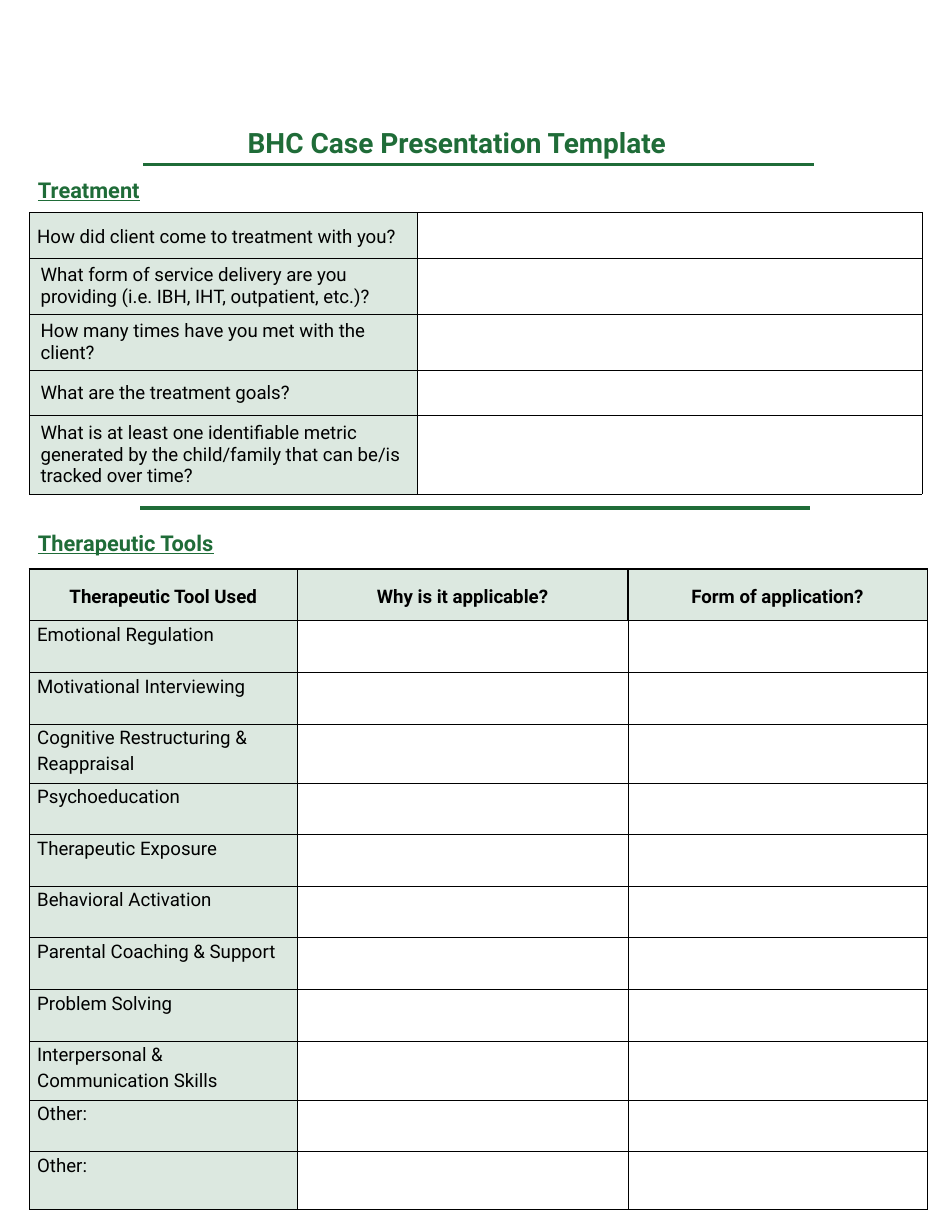
from lxml import etree
from pptx import Presentation
from pptx.dml.color import RGBColor
from pptx.enum import shapes, text
from pptx.oxml import ns
from pptx.util import Pt

GREEN = RGBColor(0x1F, 0x6C, 0x38)
PALE = RGBColor(0xDC, 0xE8, 0xE0)
BLACK = RGBColor(0, 0, 0)
WHITE = RGBColor(255, 255, 255)

QUESTIONS = [
    "How did client come to treatment with you?",
    "What form of service delivery are you providing (i.e. IBH, IHT, outpatient, etc.)?",
    "How many times have you met with the client?",
    "What are the treatment goals?",
    "What is at least one identifiable metric generated by the child/family that can be/is tracked over time?",
]
TOOL_HEADINGS = ["Therapeutic Tool Used", "Why is it applicable?", "Form of application?"]
TOOLS = [
    "Emotional Regulation", "Motivational Interviewing",
    "Cognitive Restructuring & Reappraisal", "Psychoeducation",
    "Therapeutic Exposure", "Behavioral Activation",
    "Parental Coaching & Support", "Problem Solving",
    "Interpersonal & Communication Skills", "Other:", "Other:",
]


class FormPage:
    font = "Roboto"

    def __init__(self, deck):
        self.page = deck.slides.add_slide(deck.slide_layouts[5])

    def format_text(self, para, size, color=BLACK, bold=False, underline=None):
        for span in para.runs:
            span.font.name = self.font
            span.font.size = Pt(size)
            span.font.bold = bold
            span.font.underline = underline
            span.font.color.rgb = color

    def title(self, words, left, top, width, height):
        box = self.page.shapes.title
        box.left, box.top, box.width, box.height = map(Pt, (left, top, width, height))
        frame = box.text_frame
        frame.text = words
        frame.word_wrap = False
        frame.auto_size = text.MSO_AUTO_SIZE.NONE
        frame.vertical_anchor = text.MSO_ANCHOR.TOP
        frame.paragraphs[0].alignment = text.PP_ALIGN.LEFT
        self.format_text(frame.paragraphs[0], 18, GREEN, bold=True)

    def heading(self, words, top):
        box = self.page.shapes.add_textbox(Pt(17.3), Pt(top), Pt(574), Pt(24.5))
        frame = box.text_frame
        frame.word_wrap = True
        frame.text = words
        para = frame.paragraphs[0]
        para.space_after = Pt(8)
        self.format_text(para, 14, GREEN, bold=True, underline=True)

    def rule(self, left, top):
        line = self.page.shapes.add_connector(
            shapes.MSO_CONNECTOR.STRAIGHT, Pt(left), Pt(top), Pt(left + 431), Pt(top))
        line.line.color.rgb = GREEN
        line.line.width = Pt(2.25)
        etree.SubElement(line._element.spPr, ns.qn("a:effectLst"))

    def table(self, top, widths, heights):
        frame = self.page.shapes.add_table(
            len(heights), len(widths), Pt(18.9), Pt(top), Pt(sum(widths)), Pt(sum(heights)))
        grid = frame.table
        grid.first_row = grid.horz_banding = False
        for column, width in zip(grid.columns, widths):
            column.width = Pt(width)
        for row, height in zip(grid.rows, heights):
            row.height = Pt(height)
        for cell in grid.iter_cells():
            self.border(cell, 0.25)
            self.fill(cell, WHITE)
        return grid

    def fill(self, cell, color):
        cell.fill.solid()
        cell.fill.fore_color.rgb = color

    def border(self, cell, width, sides="LRTB"):
        properties = cell._tc.get_or_add_tcPr()
        for position, side in enumerate(sides):
            tag = ns.qn(f"a:ln{side}")
            for old in properties.findall(tag):
                properties.remove(old)
            edge = etree.Element(tag, w=str(Pt(width)))
            solid = etree.SubElement(edge, ns.qn("a:solidFill"))
            etree.SubElement(solid, ns.qn("a:srgbClr"), val=str(BLACK))
            properties.insert(position, edge)

    def label(self, cell, words, tight=True, middle=True, bold=False):
        cell.text = words
        self.fill(cell, PALE)
        cell.vertical_anchor = text.MSO_ANCHOR.MIDDLE if middle else text.MSO_ANCHOR.TOP
        para = cell.text_frame.paragraphs[0]
        if tight:
            cell.margin_left = cell.margin_right = Pt(5)
            cell.margin_top = cell.margin_bottom = Pt(0)
            para.line_spacing = 1.16
        if bold:
            para.alignment = text.PP_ALIGN.CENTER
        self.format_text(para, 12, bold=bold)


def main():
    deck = Presentation()
    deck.slide_width, deck.slide_height = Pt(612), Pt(792)
    form = FormPage(deck)

    form.title("BHC Case Presentation Template", 152, 77, 287, 29)
    form.rule(92.2, 105.8)
    form.heading("Treatment", 110.2)
    treatment = form.table(136.4, [249, 324.7], [29.3, 36, 36, 29.3, 50.2])
    for index, question in enumerate(QUESTIONS):
        form.label(treatment.cell(index, 0), question, tight=index == 0)

    form.rule(90, 326.7)
    form.heading("Therapeutic Tools", 337)
    heights = [37.8 if len(tool) > 30 else 33.2 for tool in TOOLS]
    heights[-1] = 37.4
    tools = form.table(365.8, [172.2, 212.6, 192.4], [33.2] + heights)
    for column, words in enumerate(TOOL_HEADINGS):
        form.label(tools.cell(0, column), words, bold=True)
        form.border(tools.cell(0, column), 1)
        form.border(tools.cell(1, column), 1, "T")
    for index, tool in enumerate(TOOLS, 1):
        form.label(tools.cell(index, 0), tool, middle=False)

    deck.save("out.pptx")


if __name__ == "__main__":
    main()
